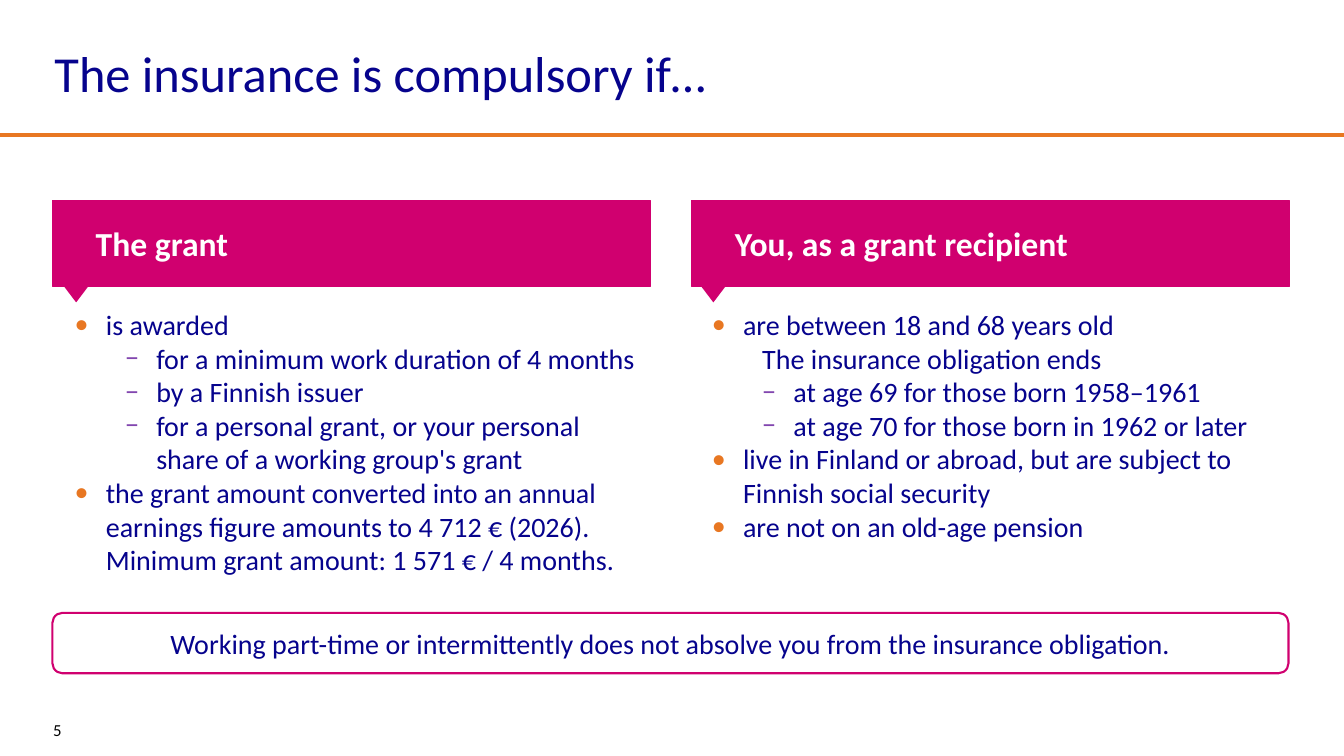
from lxml.etree import SubElement
from pptx import Presentation
from pptx.dml.color import RGBColor
from pptx.enum.shapes import MSO_CONNECTOR as Connector, MSO_SHAPE as Shape
from pptx.enum.text import MSO_ANCHOR as Anchor, MSO_AUTO_SIZE as AutoSize, PP_ALIGN as Align
from pptx.oxml.ns import qn
from pptx.util import Inches, Pt

NAVY = RGBColor(0x06, 0x03, 0x8D)
PINK = RGBColor(0xD0, 0x00, 0x6F)
ORANGE = RGBColor(0xE8, 0x77, 0x22)
PURPLE = RGBColor(0x82, 0x46, 0xAF)
WHITE = RGBColor(0xFF, 0xFF, 0xFF)
BLACK = RGBColor(0x00, 0x00, 0x00)

MAIN, SUB, PLAIN = "main", "sub", "plain"
LIST_STYLES = {
    MAIN: (0, 0.31, -0.31, "•", ORANGE),
    SUB: (1, 0.81, -0.31, "−", PURPLE),
    PLAIN: (1, 0.5, 0, None, None),
}

COLUMNS = [
    (0.52, 0.54, 0.55, "The grant", [
        (MAIN, "is awarded"),
        (SUB, "for a minimum work duration of 4 months"),
        (SUB, "by a Finnish issuer"),
        (SUB, "for a personal grant, or your personal share of a working group's grant"),
        (MAIN, "the grant amount converted into an annual earnings figure amounts "
               "to 4 712 € (2026). Minimum grant amount: 1 571 € / 4 months."),
    ]),
    (6.86, 6.86, 6.87, "You, as a grant recipient", [
        (MAIN, "are between 18 and 68 years old"),
        (PLAIN, "The insurance obligation ends"),
        (SUB, "at age 69 for those born 1958–1961"),
        (SUB, "at age 70 for those born in 1962 or later"),
        (MAIN, "live in Finland or abroad, but are subject to Finnish social security"),
        (MAIN, "are not on an old-age pension"),
    ]),
]


class SlideBuilder:
    typeface = "Calibri"

    def __init__(self, page):
        self.page = page

    def place(self, box, left, top, width, height):
        box.left, box.top = Inches(left), Inches(top)
        box.width, box.height = Inches(width), Inches(height)

    def frame(self, box, anchor, insets=(0.1, 0.05, 0.1, 0.05)):
        frame = box.text_frame
        frame.word_wrap = True
        frame.auto_size = AutoSize.NONE
        frame.vertical_anchor = anchor
        (frame.margin_left, frame.margin_top,
         frame.margin_right, frame.margin_bottom) = map(Inches, insets)
        return frame

    def set_text(self, para, text, size, color, bold=False, align=Align.LEFT):
        para.text = text
        para.alignment = align
        para.space_before = Pt(0)
        font = para.font
        font.name, font.size, font.bold = self.typeface, Pt(size), bold
        font.color.rgb = color

    def title(self, text):
        box = self.page.shapes.title
        self.place(box, 0.44, 0.26, 12.47, 1)
        para = self.frame(box, Anchor.MIDDLE).paragraphs[0]
        self.set_text(para, text, 36, NAVY)
        para.line_spacing = 0.9

    def rule(self, top):
        line = self.page.shapes.add_connector(
            Connector.STRAIGHT, 0, Inches(top), Inches(13.33), Inches(top))
        line.line.color.rgb = ORANGE
        line.line.width = Pt(3.5)
        SubElement(line._element.spPr, qn("a:effectLst"))

    def shape(self, kind, bounds, fill, line_width=0):
        box = self.page.shapes.add_shape(kind, *map(Inches, bounds))
        box.shadow.inherit = False
        box.fill.solid()
        box.fill.fore_color.rgb = fill
        if line_width:
            box.line.color.rgb = PINK
            box.line.width = Pt(line_width)
        else:
            box.line.fill.background()
        return box

    def header(self, left, pointer_left, text):
        box = self.shape(Shape.RECTANGLE, (left, 1.99, 5.93, 0.85), PINK, 1)
        frame = self.frame(box, Anchor.MIDDLE, (0.43, 0.05, 0.1, 0.05))
        self.set_text(frame.paragraphs[0], text, 24, WHITE, bold=True)
        pointer = self.shape(Shape.ISOSCELES_TRIANGLE, (pointer_left, 2.73, 0.41, 0.27), PINK)
        pointer.rotation = 180

    def bullet(self, para, style):
        level, margin, indent, mark, color = LIST_STYLES[style]
        para.level = level
        properties = para._p.get_or_add_pPr()
        properties.set("marL", str(Inches(margin)))
        properties.set("indent", str(Inches(indent)))
        if mark:
            tint = SubElement(properties, qn("a:buClr"))
            SubElement(tint, qn("a:srgbClr"), val=str(color))
            SubElement(properties, qn("a:buFont"), typeface=self.typeface)
            SubElement(properties, qn("a:buChar"), char=mark)
        else:
            SubElement(properties, qn("a:buNone"))

    def listing(self, box, left, items):
        self.place(box, left, 2.5, 6.02, 3.56)
        frame = self.frame(box, Anchor.TOP, (0.2, 0.55, 0.2, 0.05))
        for index, (style, text) in enumerate(items):
            para = frame.add_paragraph() if index else frame.paragraphs[0]
            self.bullet(para, style)
            self.set_text(para, text, 20, NAVY)

    def callout(self, text):
        box = self.shape(Shape.ROUNDED_RECTANGLE, (0.52, 6.08, 12.26, 0.6), WHITE, 1.5)
        para = self.frame(box, Anchor.MIDDLE).paragraphs[0]
        self.set_text(para, text, 20, NAVY, align=Align.CENTER)

    def page_number(self, text):
        box = self.page.shapes.add_textbox(*map(Inches, (0.43, 7.08, 1.04, 0.33)))
        self.set_text(self.frame(box, Anchor.MIDDLE).paragraphs[0], text, 12, BLACK)


def main():
    deck = Presentation()
    deck.slide_width, deck.slide_height = Inches(13.33), Inches(7.5)
    page = deck.slides.add_slide(deck.slide_layouts[3])
    builder = SlideBuilder(page)
    builder.rule(1.34)
    builder.title("The insurance is compulsory if…")
    bodies = list(page.placeholders)[1:]
    for body, (left, list_left, pointer_left, heading, items) in zip(bodies, COLUMNS):
        builder.header(left, pointer_left, heading)
        builder.listing(body, list_left, items)
    builder.callout("Working part-time or intermittently does not absolve you "
                    "from the insurance obligation.")
    builder.page_number("5")
    deck.save("out.pptx")


if __name__ == "__main__":
    main()
